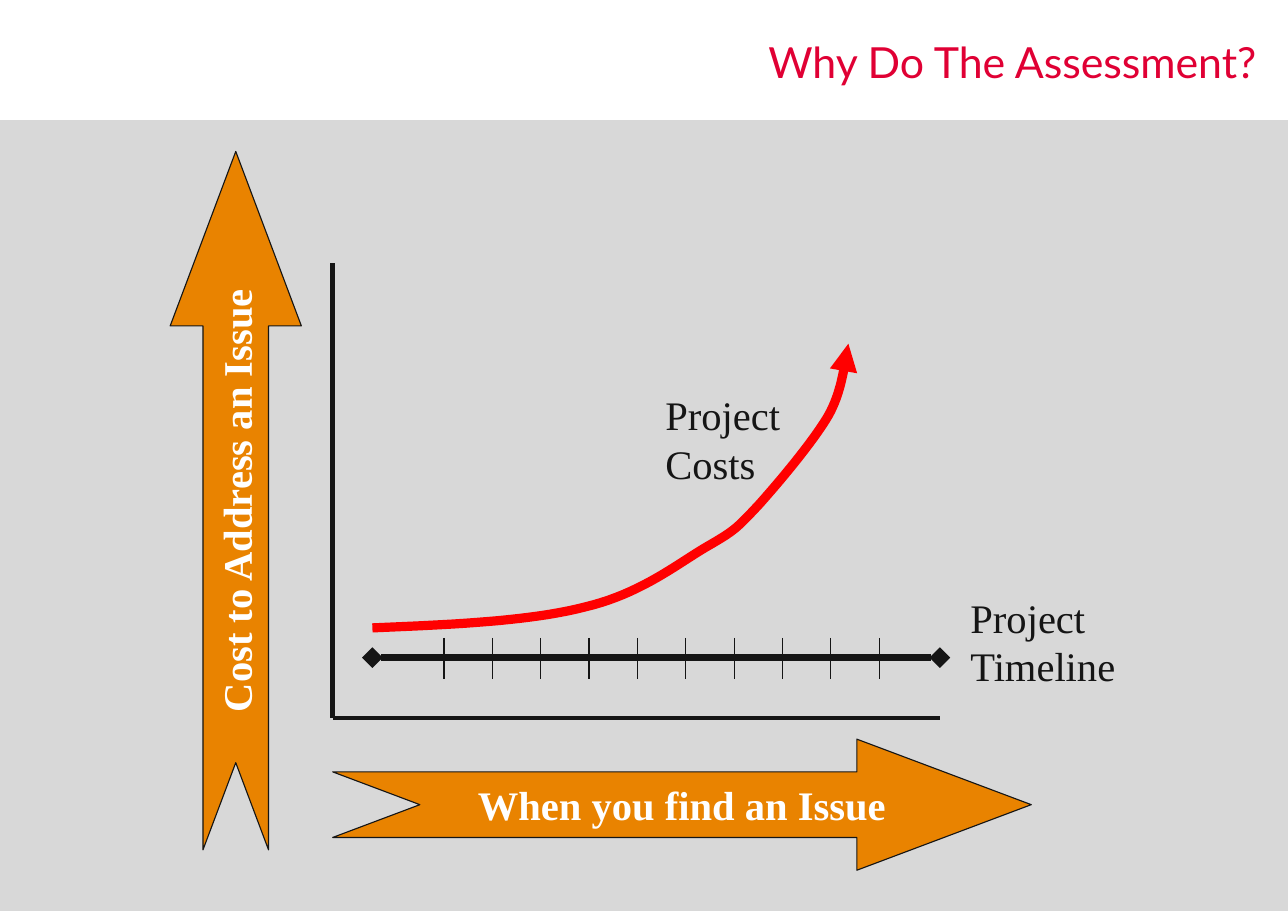
from dataclasses import dataclass

from lxml.etree import SubElement
from pptx import Presentation
from pptx.dml.color import RGBColor
from pptx.enum.shapes import MSO_CONNECTOR, MSO_SHAPE
from pptx.enum.text import MSO_ANCHOR, PP_ALIGN
from pptx.oxml.ns import qn
from pptx.util import Inches, Pt

SERIF = "Times New Roman"
INK = "151515"
ORANGE = "E98300"


@dataclass
class Rule:
    start: tuple[float, float]
    end: tuple[float, float]
    width: float
    head: str = ""
    tail: str = ""


@dataclass
class Label:
    box: tuple[float, float, float, float]
    lines: list[str]


@dataclass
class Arrow:
    box: tuple[float, float, float, float]
    text: str
    turn: int = 0


def color(code: str) -> RGBColor:
    return RGBColor.from_string(code)


def add_ends(line, head: str, tail: str) -> None:
    node = line._get_or_add_ln()
    for tag, kind in (("a:headEnd", head), ("a:tailEnd", tail)):
        if kind:
            SubElement(node, qn(tag), type=kind)


def write(frame, lines: list[str], font: str, size: float, code: str,
          align=PP_ALIGN.LEFT, bold: bool = False) -> None:
    for i, text in enumerate(lines):
        para = frame.paragraphs[0] if i == 0 else frame.add_paragraph()
        para.text = text
        para.alignment = align
        para.font.name = font
        para.font.size = Pt(size)
        para.font.bold = bold
        para.font.color.rgb = color(code)


def draw_rule(slide, rule: Rule) -> None:
    ends = [Inches(n) for n in (*rule.start, *rule.end)]
    link = slide.shapes.add_connector(MSO_CONNECTOR.STRAIGHT, *ends)
    link.line.color.rgb = color(INK)
    link.line.width = Pt(rule.width)
    add_ends(link.line, rule.head, rule.tail)
    SubElement(link._element.spPr, qn("a:effectLst"))


def draw_label(slide, label: Label) -> None:
    box = slide.shapes.add_textbox(*map(Inches, label.box))
    box.text_frame.word_wrap = False
    write(box.text_frame, label.lines, SERIF, 26.5, INK)


def draw_arrow(slide, arrow: Arrow) -> None:
    shape = slide.shapes.add_shape(MSO_SHAPE.NOTCHED_RIGHT_ARROW, *map(Inches, arrow.box))
    shape.adjustments[0] = 0.5
    shape.adjustments[1] = 1.33
    shape.rotation = arrow.turn
    shape.shadow.inherit = False
    shape.fill.solid()
    shape.fill.fore_color.rgb = color(ORANGE)
    shape.line.color.rgb = color(INK)
    shape.line.width = Pt(0.75)
    frame = shape.text_frame
    frame.word_wrap = False
    frame.vertical_anchor = MSO_ANCHOR.MIDDLE
    write(frame, [arrow.text], SERIF, 26.5, "FFFFFF", PP_ALIGN.CENTER, True)


def trace(knots: list[tuple[float, float]], steps: int = 20) -> list[tuple[int, int]]:
    """Points along a chain of cubic Bézier curves."""
    points = [knots[0]]
    for k in range(0, len(knots) - 1, 3):
        a, b, c, d = knots[k:k + 4]
        for i in range(1, steps + 1):
            t = i / steps
            u = 1 - t
            points.append(tuple(
                u**3 * a[n] + 3 * u * u * t * b[n] + 3 * u * t * t * c[n] + t**3 * d[n]
                for n in (0, 1)))
    return [(Inches(x), Inches(y)) for x, y in points]


def draw_curve(slide, knots: list[tuple[float, float]]) -> None:
    first, *rest = trace(knots)
    pen = slide.shapes.build_freeform(*first)
    pen.add_line_segments(rest, close=False)
    curve = pen.convert_to_shape()
    curve.shadow.inherit = False
    curve.fill.background()
    curve.line.color.rgb = color("FF0000")
    curve.line.width = Pt(6)
    add_ends(curve.line, "", "triangle")


COSTS = [
    (3.38, 5.7), (4.1, 5.67), (4.81, 5.64), (5.31, 5.51),
    (5.82, 5.39), (6.16, 5.11), (6.42, 4.96),
    (6.68, 4.81), (6.69, 4.79), (6.88, 4.59),
    (7.06, 4.39), (7.38, 4.01), (7.52, 3.77),
    (7.66, 3.52), (7.67, 3.23), (7.7, 3.12),
]
TICKS = [4.03 + i * (7.98 - 4.03) / 9 for i in range(10)]
RULES = [
    Rule((3.38, 5.97), (8.53, 5.97), 4.5, "diamond", "diamond"),
    *[Rule((x, 5.79), (x, 6.16), 0.75) for x in TICKS],
    Rule((3.02, 6.52), (3.02, 2.39), 3),
    Rule((3.02, 6.52), (8.53, 6.52), 3),
]
ARROWS = [
    Arrow((3.02, 6.71, 6.34, 1.19), "When you find an Issue"),
    Arrow((-1.03, 3.95, 6.34, 1.19), "Cost to Address an Issue", 270),
]
LABELS = [
    Label((8.71, 5.33, 1.53, 0.99), ["Project", "Timeline"]),
    Label((5.94, 3.49, 1.25, 0.99), ["Project", "Costs"]),
]


def main() -> None:
    deck = Presentation()
    deck.slide_width = Inches(11.69)
    deck.slide_height = Inches(8.27)
    slide = deck.slides.add_slide(deck.slide_layouts[6])

    # Grey panel
    panel = slide.shapes.add_shape(
        MSO_SHAPE.RECTANGLE, 0, Inches(1.09), Inches(11.69), Inches(7.18))
    panel.shadow.inherit = False
    panel.fill.solid()
    panel.fill.fore_color.rgb = color("D8D8D8")
    panel.line.fill.background()

    # Title
    title = slide.shapes.add_textbox(*map(Inches, (3.31, 0.16, 8.19, 0.79)))
    title.text_frame.word_wrap = True
    title.text_frame.vertical_anchor = MSO_ANCHOR.MIDDLE
    write(title.text_frame, ["Why Do The Assessment?"], "Lato", 28, "E00034", PP_ALIGN.RIGHT)

    # Cost curve, timeline and axes
    draw_curve(slide, COSTS)
    for rule in RULES:
        draw_rule(slide, rule)

    # Arrows and labels
    for arrow in ARROWS:
        draw_arrow(slide, arrow)
    for label in LABELS:
        draw_label(slide, label)

    deck.save("out.pptx")


if __name__ == "__main__":
    main()
